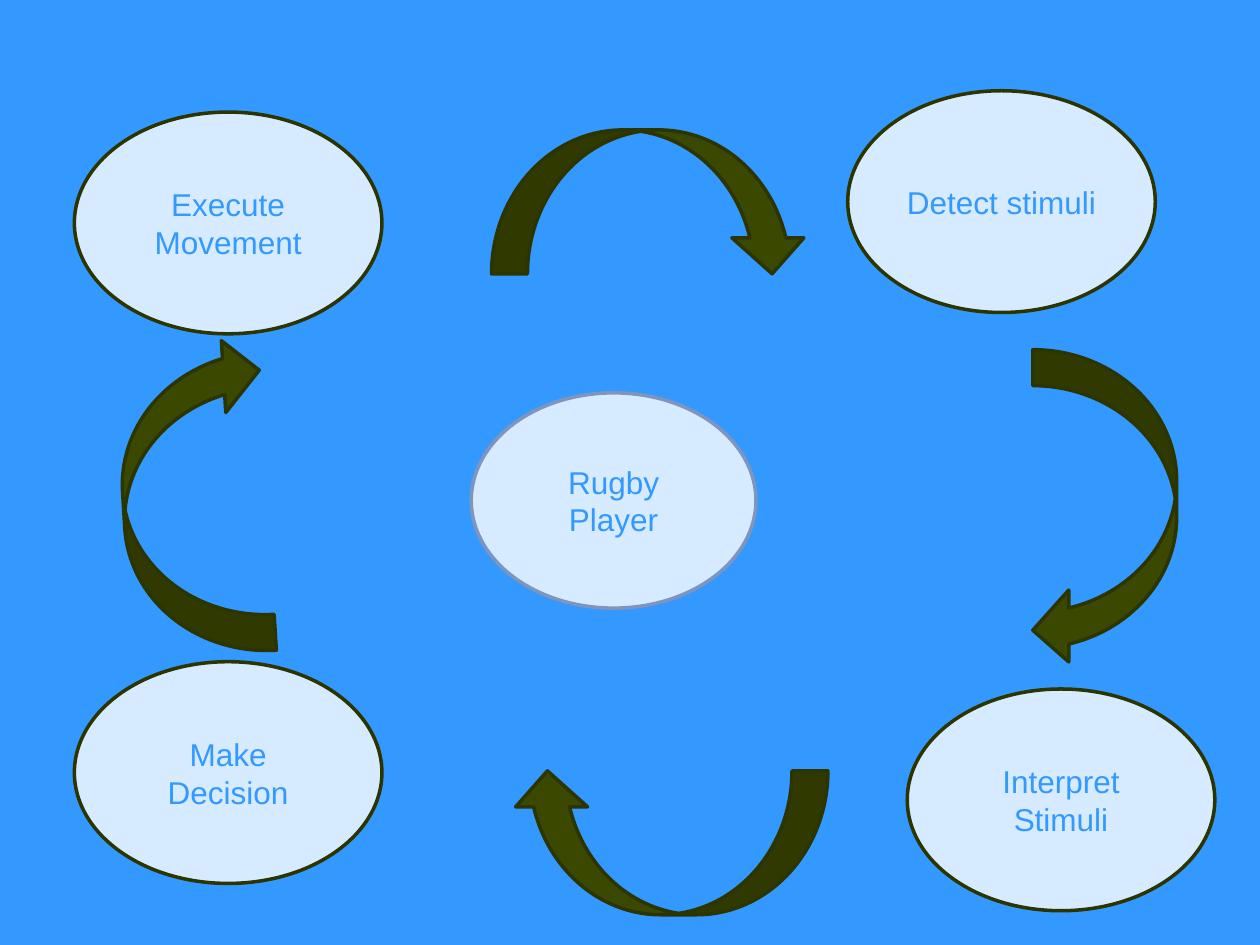
from pptx import Presentation
from pptx.dml.color import RGBColor
from pptx.enum import shapes, text
from pptx.util import Cm, Pt

COLOURS = {
    "sky": "3399FF",
    "pale": "D6EBFF",
    "slate": "8095BD",
    "olive": "3B4800",
    "dark": "2C3500",
}


def colour(name):
    return RGBColor.from_string(COLOURS[name])


def assign(target, values):
    for name, value in values.items():
        setattr(target, name, value)


class CycleSlide:
    stage_size = (6.2, 4.47)
    arrow_size = (6.38, 2.9)
    font_format = {"name": "Arial", "size": Pt(18)}
    frame_format = {
        "word_wrap": True,
        "vertical_anchor": text.MSO_ANCHOR.MIDDLE,
    }

    def __init__(self, deck):
        self.page = deck.slides.add_slide(deck.slide_layouts[6])
        background = self.page.background.fill
        background.solid()
        background.fore_color.rgb = colour("sky")

    def shape(self, kind, place, size, fill, line):
        shape = self.page.shapes.add_shape(kind, *map(Cm, (*place, *size)))
        shape.shadow.inherit = False
        shape.fill.solid()
        shape.fill.fore_color.rgb = colour(fill)
        shape.line.color.rgb = colour(line)
        shape.line.width = Pt(2)
        return shape

    def oval(self, label, place, size=stage_size, line="dark"):
        oval = self.shape(shapes.MSO_SHAPE.OVAL, place, size, "pale", line)
        assign(oval.text_frame, self.frame_format)
        para = oval.text_frame.paragraphs[0]
        para.alignment = text.PP_ALIGN.CENTER
        span = para.add_run()
        span.text = label
        assign(span.font, self.font_format)
        span.font.color.rgb = colour("sky")

    def arrow(self, place, rotation):
        arrow = self.shape(shapes.MSO_SHAPE.CURVED_DOWN_ARROW, place,
                           self.arrow_size, "olive", "dark")
        arrow.rotation = rotation


def main():
    deck = Presentation()
    assign(deck, {"slide_width": Cm(25.4), "slide_height": Cm(19.05)})
    cycle = CycleSlide(deck)

    cycle.oval("Rugby Player", (9.5, 7.92), (5.74, 4.34), "slate")
    stages = {
        "Execute Movement": (1.5, 2.26),
        "Make Decision": (1.5, 13.34),
        "Interpret Stimuli": (18.29, 13.89),
        "Detect stimuli": (17.09, 1.83),
    }
    for label, place in stages.items():
        cycle.oval(label, place)

    arrows = {
        180: (10.31, 15.54),
        266.5: (0.74, 8.56),
        0: (9.91, 2.62),
        90: (19.08, 8.79),
    }
    for rotation, place in arrows.items():
        cycle.arrow(place, rotation)

    deck.save("out.pptx")


if __name__ == "__main__":
    main()
